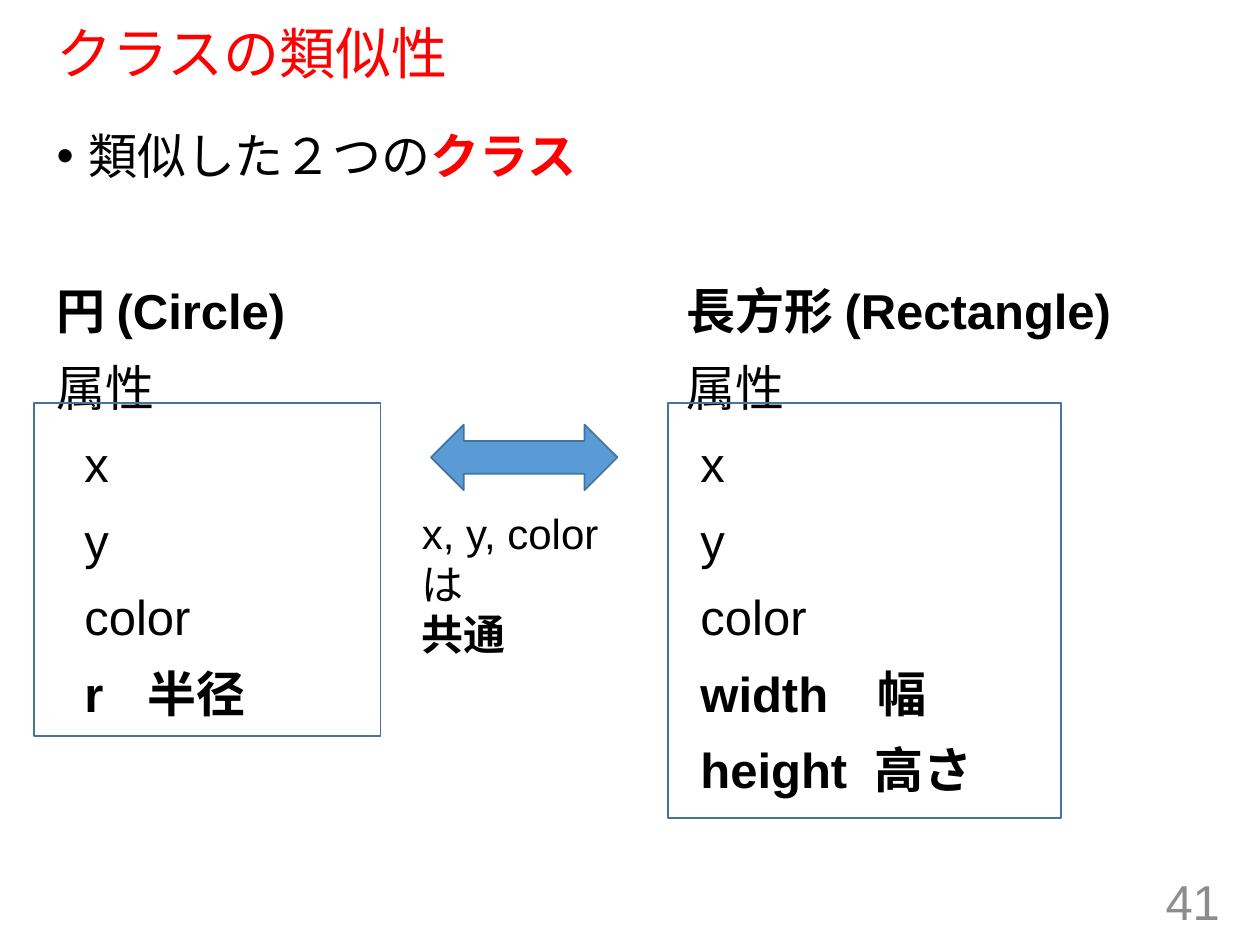
from pptx import Presentation
from pptx.dml.color import RGBColor
from pptx.enum.shapes import MSO_SHAPE
from pptx.enum.text import MSO_ANCHOR, PP_ALIGN
from pptx.oxml.ns import qn
from pptx.util import Inches, Pt
from lxml import etree

BLACK = RGBColor(0x00, 0x00, 0x00)
RED = RGBColor(0xFF, 0x00, 0x00)
GRAY = RGBColor(0x8C, 0x8C, 0x8C)
BLUE = RGBColor(0x5B, 0x9B, 0xD5)
OUTLINE = RGBColor(0x43, 0x73, 0x9E)

deck = Presentation()
deck.slide_width, deck.slide_height = Inches(10), Inches(7.5)
page = deck.slides.add_slide(deck.slide_layouts[6])


def add_text(area, paragraphs, size, para_format={}, inset=0.1, **frame_format):
    box = page.shapes.add_textbox(*map(Inches, area))
    frame = box.text_frame
    frame_values = {
        "word_wrap": True,
        "margin_left": Inches(inset),
        "margin_right": Inches(inset),
        "margin_top": Inches(inset / 2),
        "margin_bottom": Inches(inset / 2),
    }
    for name, value in {**frame_values, **frame_format}.items():
        setattr(frame, name, value)
    for index, spans in enumerate(paragraphs):
        para = frame.paragraphs[0] if index == 0 else frame.add_paragraph()
        for name, value in para_format.items():
            setattr(para, name, value)
        for text, color, bold in spans:
            span = para.add_run()
            span.text = text
            span.font.color.rgb = color
            for name, value in {"name": "Arial", "size": Pt(size), "bold": bold}.items():
                setattr(span.font, name, value)
    return frame


def set_indent(para, left, first=0):
    properties = para._p.get_or_add_pPr()
    properties.set("marL", str(Inches(left)))
    properties.set("indent", str(Inches(first)))
    return properties


row_format = {"line_spacing": Pt(43.7)}

add_text((0.35, 0.19, 9.25, 0.51), [[("クラスの類似性", RED, False)]], 32,
         {"line_spacing": 0.9}, vertical_anchor=MSO_ANCHOR.MIDDLE)

bullet_spans = [("類似した２つの", BLACK, False), ("クラス", RED, True)]
bullet_frame = add_text((0.45, 0.86, 9.05, 0.7), [bullet_spans], 28, row_format, inset=0)
bullet_properties = set_indent(bullet_frame.paragraphs[0], 0.25, -0.25)
etree.SubElement(bullet_properties, qn("a:buFont")).set("typeface", "Arial")
etree.SubElement(bullet_properties, qn("a:buChar")).set("char", "•")

classes = [
    (0.45, 0.22, "円 (Circle)", ["r\t半径"]),
    (5.45, 0.11, "長方形 (Rectangle)", ["width　幅", "height  高さ"]),
]
for left, indent, heading, own_attributes in classes:
    rows = [(heading, True), ("属性", False)]
    rows += [(name, False) for name in ("x", "y", "color")]
    rows += [(name, True) for name in own_attributes]
    frame = add_text((left, 2.09, 4.2, 0.61 * len(rows)),
                     [[(text, BLACK, bold)] for text, bold in rows],
                     28, row_format, inset=0)
    for para in frame.paragraphs[2:]:
        set_indent(para, indent)

add_text((7.53, 6.95, 2.25, 0.4), [[("41", GRAY, False)]], 28,
         {"alignment": PP_ALIGN.RIGHT}, vertical_anchor=MSO_ANCHOR.MIDDLE)

shapes = [
    (MSO_SHAPE.RECTANGLE, (5.3, 3.2, 3.12, 3.29), None),
    (MSO_SHAPE.RECTANGLE, (0.27, 3.2, 2.75, 2.64), None),
    (MSO_SHAPE.LEFT_RIGHT_ARROW, (3.42, 3.37, 1.48, 0.52), BLUE),
]
for kind, area, fill in shapes:
    shape = page.shapes.add_shape(kind, *map(Inches, area))
    shape.shadow.inherit = False
    shape.line.color.rgb = OUTLINE
    shape.line.width = Pt(1)
    if fill is None:
        shape.fill.background()
    else:
        shape.fill.solid()
        shape.fill.fore_color.rgb = fill

add_text((3.25, 3.98, 1.82, 0.79),
         [[("x, y, color は", BLACK, False)], [("共通", BLACK, True)]], 24, word_wrap=False)

deck.save("out.pptx")
